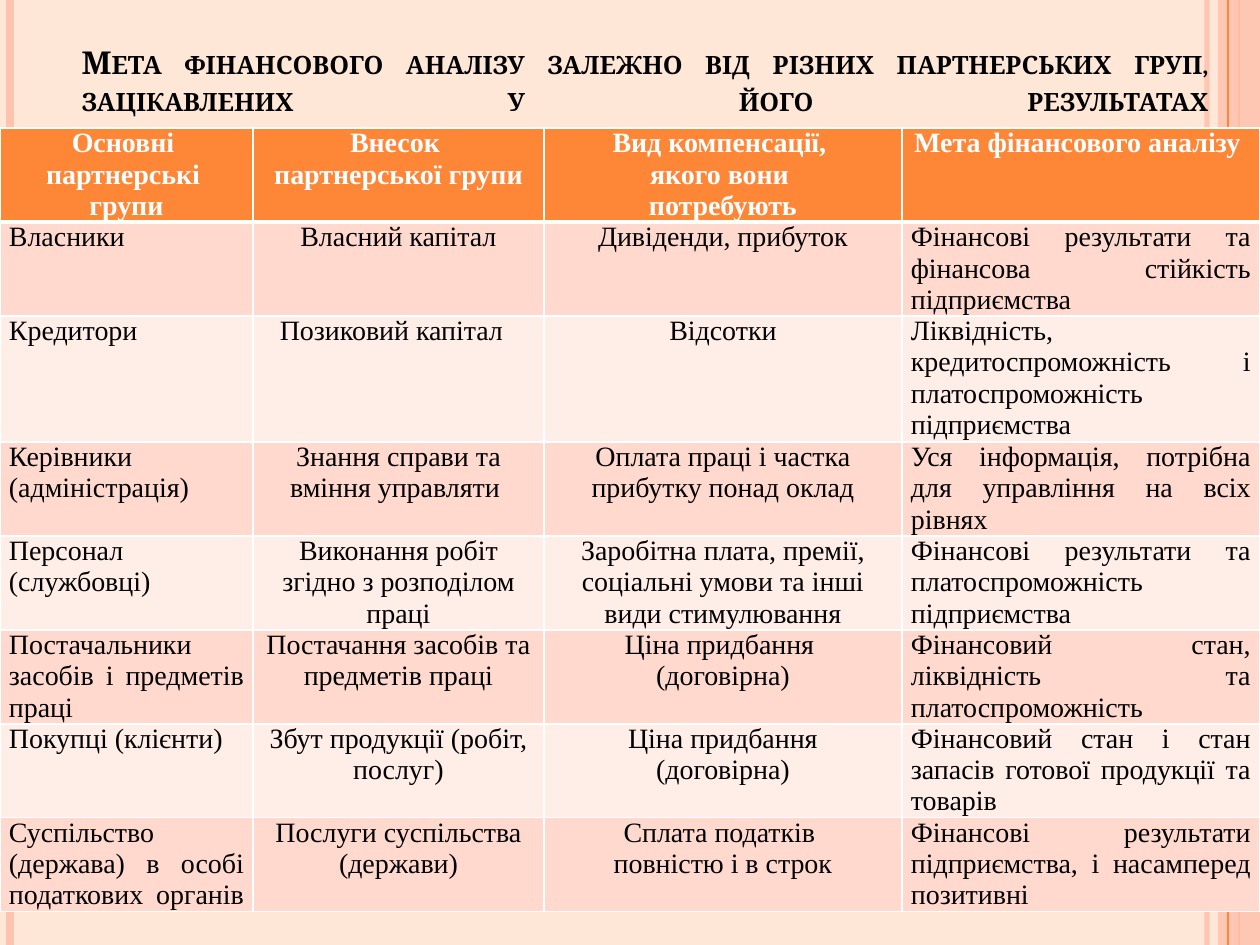
from lxml.etree import SubElement
from pptx import Presentation
from pptx.dml.color import RGBColor
from pptx.enum.shapes import MSO_CONNECTOR, MSO_SHAPE
from pptx.enum.text import MSO_ANCHOR, MSO_AUTO_SIZE, PP_ALIGN as AL
from pptx.oxml.ns import qn
from pptx.util import Emu, Pt

W, H = 1260, 945
COLORS = {"bg": "FFE7D7", "stripe": "FEC3AE", "accent": "FE8637", "white": "FFFFFF",
          "black": "000000", "odd": "FFD9CE", "even": "FFEDE8"}

TITLE = ("Мета фінансового аналізу залежно від різних партнерських груп, "
         "зацікавлених у його результатах")
COL_WIDTHS = [253, 291, 358, 358]
ROW_HEIGHTS = [94, 94, 126, 94, 94, 94, 94, 94]
# A line feed inside a cell starts a new paragraph.
ROWS = [
    ["Основні \nпартнерські \nгрупи", "Внесок \nпартнерської групи",
     "Вид компенсації, \nякого вони \nпотребують", "Мета фінансового аналізу "],
    ["Власники ", "Власний капітал", "Дивіденди, прибуток",
     "Фінансові результати та фінансова стійкість підприємства "],
    ["Кредитори ", "Позиковий капітал  ", "Відсотки",
     "Ліквідність, кредитоспроможність і платоспроможність підприємства "],
    ["Керівники (адміністрація) ", "Знання справи та вміння управляти ",
     "Оплата праці і частка прибутку понад оклад",
     "Уся інформація, потрібна для управління на всіх рівнях"],
    ["Персонал (службовці)", "Виконання робіт згідно з розподілом праці",
     "Заробітна плата, премії, соціальні умови та інші види стимулювання",
     "Фінансові результати та платоспроможність підприємства "],
    ["Постачальники засобів і предметів праці", "Постачання засобів та предметів праці",
     "Ціна придбання \n(договірна)", "Фінансовий стан, ліквідність та платоспроможність"],
    ["Покупці (клієнти)", "Збут продукції (робіт, послуг)", "Ціна придбання\n(договірна)",
     "Фінансовий стан і стан запасів готової продукції та товарів"],
    ["Суспільство (держава) в особі податкових органів ", "Послуги суспільства (держави)",
     "Сплата податків \nповністю і в строк",
     "Фінансові результати підприємства, і насамперед позитивні "],
]


def px(n):
    return Emu(round(n * 914400 / 126))


def rgb(name):
    return RGBColor.from_string(COLORS[name])


def set_attrs(obj, **values):
    for name, value in values.items():
        setattr(obj, name, value)


def format_font(font, color, **values):
    set_attrs(font, **values)
    font.color.rgb = rgb(color)


def set_alpha(element, percent):
    SubElement(next(element.iter(qn("a:srgbClr"))), qn("a:alpha"), val=str(percent * 1000))


def add_stripe(slide, x, color, width, alpha=100):
    """Draw a full-height vertical line."""
    ln = slide.shapes.add_connector(MSO_CONNECTOR.STRAIGHT, px(x), 0, px(x), px(H))
    ln.line.color.rgb = rgb(color)
    ln.line.width = Pt(width)
    sp_pr = ln._element.spPr
    SubElement(sp_pr, qn("a:effectLst"))
    if alpha < 100:
        set_alpha(sp_pr, alpha)


def add_band(slide, x, color, alpha):
    """Fill the slide from x to its right edge."""
    sp = slide.shapes.add_shape(MSO_SHAPE.RECTANGLE, px(x), 0, px(W - x), px(H))
    sp.shadow.inherit = False
    sp.fill.solid()
    sp.fill.fore_color.rgb = rgb(color)
    sp.line.fill.background()
    set_alpha(sp._element.spPr, alpha)


def format_title(slide):
    """Fill the title; its closing line break stretches the last line of text."""
    sp = slide.shapes.title
    set_attrs(sp, left=px(69), top=0, width=px(1152), height=px(186))
    tf = sp.text_frame
    set_attrs(tf, word_wrap=True, auto_size=MSO_AUTO_SIZE.NONE,
              vertical_anchor=MSO_ANCHOR.BOTTOM, margin_bottom=px(30))
    p = tf.paragraphs[0]
    p.alignment = AL.JUSTIFY
    r = p.add_run()
    r.text = TITLE
    format_font(r.font, "black", name="Cambria", size=Pt(18), bold=True)
    r.font._element.set("cap", "small")
    p.add_line_break()
    SubElement(p._p.find(qn("a:br")), qn("a:rPr"), sz="1800")
    SubElement(p._p, qn("a:endParaRPr"), sz="1800")
    sp._element.getparent().append(sp._element)


def set_borders(cell, **widths):
    tc_pr = cell._tc.get_or_add_tcPr()
    for side, width in widths.items():
        ln = SubElement(tc_pr, qn(f"a:ln{side}"), w=str(Pt(width)))
        fill = SubElement(ln, qn("a:solidFill"))
        SubElement(fill, qn("a:srgbClr"), val=COLORS["white"])


def fill_cell(cell, text, fill, color, align, bold):
    set_attrs(cell, margin_left=px(9), margin_right=px(9), margin_top=0, margin_bottom=0)
    cell.fill.solid()
    cell.fill.fore_color.rgb = rgb(fill)
    cell.text = text
    for p in cell.text_frame.paragraphs:
        p.alignment = align
        for r in p.runs:
            format_font(r.font, color, name="Times New Roman", size=Pt(16), bold=bold)


def add_partner_table(slide):
    table = slide.shapes.add_table(len(ROWS), len(COL_WIDTHS), 0, px(128), px(W),
                                   px(sum(ROW_HEIGHTS))).table
    for col, width in zip(table.columns, COL_WIDTHS):
        col.width = px(width)
    for i, (row, height) in enumerate(zip(ROWS, ROW_HEIGHTS)):
        table.rows[i].height = px(height)
        header = i == 0
        fill = "accent" if header else "odd" if i % 2 else "even"
        for j, text in enumerate(row):
            cell = table.cell(i, j)
            set_borders(cell, L=1, R=1, T=3 if i == 1 else 1, B=3 if header else 1)
            align = AL.CENTER if header or j in (1, 2) else AL.JUSTIFY
            fill_cell(cell, text, fill, "white" if header else "black", align, header)


def main():
    prs = Presentation()
    set_attrs(prs, slide_width=px(W), slide_height=px(H))
    slide = prs.slides.add_slide(prs.slide_layouts[5])
    slide.background.fill.solid()
    slide.background.fill.fore_color.rgb = rgb("bg")
    add_stripe(slide, 1207, "stripe", 3, alpha=93)
    add_stripe(slide, 10, "stripe", 4.5)
    add_stripe(slide, 1239, "accent", 1.5)
    add_band(slide, 1218, "stripe", alpha=87)
    add_stripe(slide, 1228, "accent", 0.75)
    format_title(slide)
    add_partner_table(slide)
    prs.save("out.pptx")


if __name__ == "__main__":
    main()
